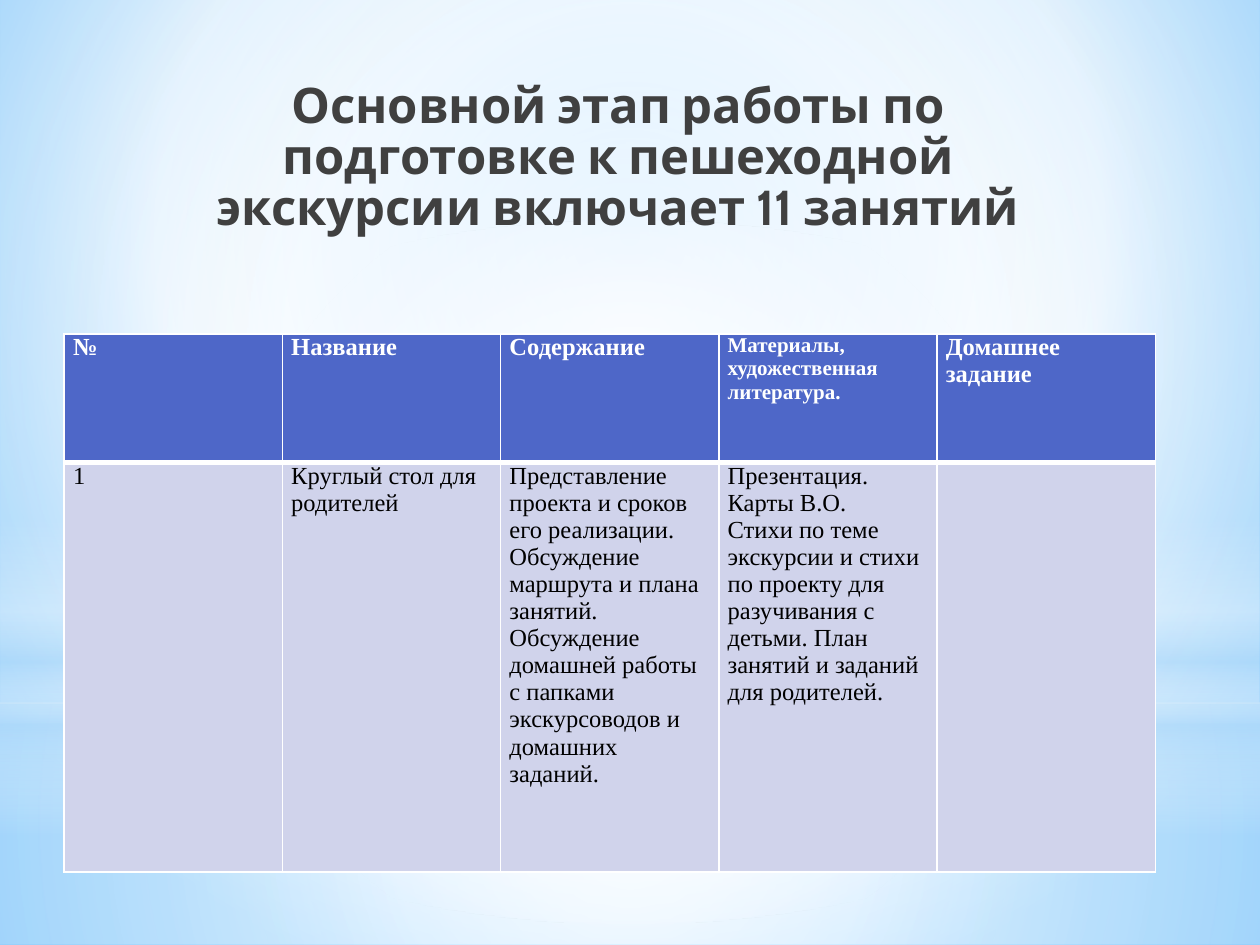
from dataclasses import dataclass
from typing import Optional

from lxml.etree import SubElement
from pptx import Presentation
from pptx.dml.color import RGBColor
from pptx.enum.shapes import MSO_SHAPE
from pptx.enum.text import MSO_ANCHOR, MSO_AUTO_SIZE, PP_ALIGN
from pptx.oxml.ns import qn
from pptx.util import Inches, Pt

COLORS = {
    "white": "FFFFFF",
    "pale": "B4DCFA",
    "sky": "9ED5FF",
    "azure": "5BB9FF",
    "title": "404040",
    "header": "4E67C8",
    "body": "D0D3EB",
    "text": "000000",
}
SLIDE_WIDTH, SLIDE_HEIGHT = Inches(10), Inches(7.5)
CENTER = (50, 50, 50, 50)


@dataclass
class Stop:
    position: int
    color: str
    opacity: int = 100


@dataclass
class Gradient:
    stops: list[Stop]
    focus: Optional[tuple[int, int, int, int]] = None


@dataclass
class Glow:
    preset: MSO_SHAPE
    top: float
    height: float
    gradient: Gradient


@dataclass
class Cell:
    paragraphs: list[str]
    size: int = 14


BACKDROP = Gradient(
    [Stop(0, "sky"), Stop(60, "white"), Stop(100, "azure")], (20, 10, 20, 60))
GLOWS = [
    Glow(MSO_SHAPE.RECTANGLE, 0.744, 0.256, Gradient(
        [Stop(0, "white", 91), Stop(37, "white", 76), Stop(100, "pale", 79)], CENTER)),
    Glow(MSO_SHAPE.RECTANGLE, 0, 0.744, Gradient(
        [Stop(0, "white", 89), Stop(48, "white", 62), Stop(100, "pale", 79)], CENTER)),
    Glow(MSO_SHAPE.RECTANGLE, 0.55, 0.333, Gradient(
        [Stop(0, "white", 0), Stop(29, "white", 30), Stop(45, "pale", 40),
         Stop(55, "white", 26), Stop(65, "pale", 60), Stop(100, "white", 0)])),
    Glow(MSO_SHAPE.OVAL, 0.233, 0.744, Gradient(
        [Stop(0, "white"), Stop(56, "white", 0)], CENTER)),
]

HEADER = [
    Cell(["№"]),
    Cell(["Название"]),
    Cell(["Содержание"]),
    Cell(["Материалы, художественная", "литература."], 12),
    Cell(["Домашнее задание"]),
]
LESSON = [
    Cell(["1"]),
    Cell(["Круглый стол для родителей"]),
    Cell(["Представление проекта и сроков его реализации.",
          "Обсуждение маршрута и плана занятий.",
          "Обсуждение домашней работы с папками экскурсоводов и домашних заданий."]),
    Cell(["Презентация.", "Карты В.О.",
          "Стихи по теме экскурсии и стихи по проекту для разучивания с детьми. "
          "План занятий и заданий для родителей."]),
    Cell([]),
]
ROW_HEIGHTS = [1.02, 3.25]
COLUMN_WIDTH = 1.732


def rgb(name: str) -> RGBColor:
    return RGBColor.from_string(COLORS[name])


def apply_format(target, values: dict) -> None:
    for attribute, value in values.items():
        setattr(target, attribute, value)


def set_gradient(fill, holder, gradient: Gradient) -> None:
    fill.solid()
    solid = holder.find(qn("a:solidFill"))
    grad = SubElement(holder, qn("a:gradFill"), rotWithShape="1")
    stop_list = SubElement(grad, qn("a:gsLst"))
    for stop in gradient.stops:
        mark = SubElement(stop_list, qn("a:gs"), pos=str(stop.position * 1000))
        color = SubElement(mark, qn("a:srgbClr"), val=COLORS[stop.color])
        if stop.opacity < 100:
            SubElement(color, qn("a:alpha"), val=str(stop.opacity * 1000))
    if gradient.focus:
        circle = SubElement(grad, qn("a:path"), path="circle")
        edges = {side: str(share * 1000) for side, share in zip("ltrb", gradient.focus)}
        SubElement(circle, qn("a:fillToRect"), **edges)
    else:
        SubElement(grad, qn("a:lin"), ang="5400000", scaled="0")
    holder.replace(solid, grad)


def draw_glow(slide, glow: Glow) -> None:
    light = slide.shapes.add_shape(
        glow.preset, 0, round(SLIDE_HEIGHT * glow.top),
        SLIDE_WIDTH, round(SLIDE_HEIGHT * glow.height))
    light.shadow.inherit = False
    light.line.fill.background()
    set_gradient(light.fill, light._element.spPr, glow.gradient)


def draw_title(slide, wording: str) -> None:
    title = slide.shapes.title
    apply_format(title, {"left": Inches(1.46), "top": Inches(0.44),
                         "width": Inches(6.89), "height": Inches(1.65)})
    frame = title.text_frame
    frame.text = wording
    apply_format(frame, {"word_wrap": True, "auto_size": MSO_AUTO_SIZE.NONE,
                         "vertical_anchor": MSO_ANCHOR.MIDDLE})
    heading = frame.paragraphs[0]
    apply_format(heading, {"alignment": PP_ALIGN.CENTER, "line_spacing": 0.87})
    font = heading.runs[0].font
    apply_format(font, {"name": "Cabin", "size": Pt(28), "bold": True})
    font.color.rgb = rgb("title")
    slide.shapes._spTree.append(title._element)


def set_borders(cell, widths: dict[str, int]) -> None:
    properties = cell._tc.get_or_add_tcPr()
    for side, width in widths.items():
        border = SubElement(properties, qn(f"a:ln{side}"), w=str(Pt(width)))
        paint = SubElement(border, qn("a:solidFill"))
        SubElement(paint, qn("a:srgbClr"), val=COLORS["white"])


def fill_cell(cell, content: Cell, is_header: bool) -> None:
    set_borders(cell, {"L": 1, "R": 1, "T": 1 if is_header else 3,
                       "B": 3 if is_header else 1})
    cell.fill.solid()
    cell.fill.fore_color.rgb = rgb("header" if is_header else "body")
    apply_format(cell, {"margin_left": Inches(0.07), "margin_right": Inches(0.07),
                        "margin_top": 0, "margin_bottom": 0,
                        "vertical_anchor": MSO_ANCHOR.TOP})
    cell.text = "\n".join(content.paragraphs)
    for paragraph in cell.text_frame.paragraphs:
        for run in paragraph.runs:
            apply_format(run.font, {"name": "Times New Roman",
                                    "size": Pt(content.size), "bold": is_header})
            run.font.color.rgb = rgb("white" if is_header else "text")


def draw_plan(slide, rows: list[list[Cell]]) -> None:
    columns = len(rows[0])
    plan = slide.shapes.add_table(
        len(rows), columns, Inches(0.51), Inches(2.65),
        Inches(COLUMN_WIDTH * columns), Inches(sum(ROW_HEIGHTS))).table
    for row, height in zip(plan.rows, ROW_HEIGHTS):
        row.height = Inches(height)
    for row_index, row in enumerate(rows):
        for column_index, content in enumerate(row):
            fill_cell(plan.cell(row_index, column_index), content, row_index == 0)


def main() -> None:
    presentation = Presentation()
    apply_format(presentation, {"slide_width": SLIDE_WIDTH, "slide_height": SLIDE_HEIGHT})
    slide = presentation.slides.add_slide(presentation.slide_layouts[5])
    backdrop = slide.background.fill
    backdrop.solid()
    set_gradient(backdrop, slide._element.cSld.bg.bgPr, BACKDROP)
    for glow in GLOWS:
        draw_glow(slide, glow)
    draw_title(slide, "Основной этап работы по подготовке к пешеходной "
                      "экскурсии включает 11 занятий")
    draw_plan(slide, [HEADER, LESSON])
    presentation.save("out.pptx")


if __name__ == "__main__":
    main()
